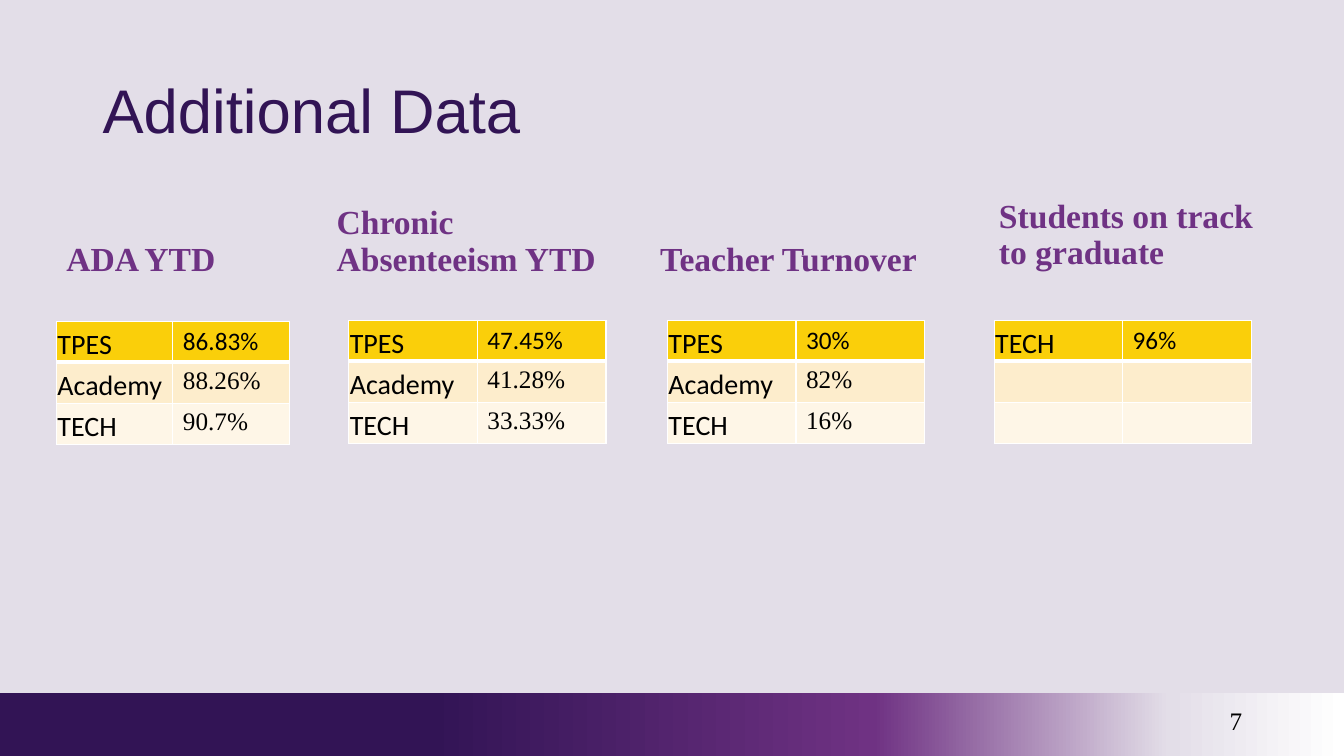
from dataclasses import dataclass

from lxml.etree import SubElement
from pptx import Presentation
from pptx.dml.color import RGBColor
from pptx.enum.shapes import MSO_SHAPE
from pptx.enum.text import MSO_ANCHOR, PP_ALIGN
from pptx.oxml.ns import qn
from pptx.util import Inches, Pt


@dataclass(frozen=True)
class Theme:
    background: str = "E3DEE8"
    title: str = "321455"
    heading: str = "6F3284"
    text: str = "000000"
    border: str = "FFFFFF"
    row_fills: tuple = ("FACF0A", "FDEDCC", "FEF6E7")
    footer_stops: tuple = ((32, "321455"), (65, "6F3283"), (87, "E3DEE8"), (100, "FFFFFF"))
    sans: str = "Arial"
    label_font: str = "Calibri"
    serif: str = "Times New Roman"
    title_size: int = 44
    heading_size: int = 24
    label_size: int = 20
    value_size: int = 18


THEME = Theme()
ROW_HEIGHTS = (0.4, 0.41, 0.41)

# Heading, heading box, table left / top / width, rows
PANELS = (
    ("ADA YTD", (0.56, 2.18, 2.3, 0.63), (0.56, 3.19, 2.31),
     (("TPES", "86.83%"), ("Academy", "88.26%"), ("TECH", "90.7%"))),
    ("Chronic Absenteeism YTD", (3.24, 1.91, 2.83, 0.9), (3.46, 3.18, 2.55),
     (("TPES", "47.45%"), ("Academy", "41.28%"), ("TECH", "33.33%"))),
    ("Teacher Turnover", (6.45, 1.91, 2.83, 0.9), (6.62, 3.18, 2.55),
     (("TPES", "30%"), ("Academy", "82%"), ("TECH", "16%"))),
    ("Students on track to graduate", (9.81, 1.85, 2.83, 0.9), (9.86, 3.18, 2.55),
     (("TECH", "96%"), ("", ""), ("", ""))),
)


def apply_format(target, values):
    for name, value in values.items():
        setattr(target, name, value)


def write_text(frame, text, size, font, color, bold=False, **para_format):
    para = frame.paragraphs[0]
    apply_format(para, para_format)
    span = para.add_run()
    span.text = text
    apply_format(span.font, {"size": Pt(size), "name": font, "bold": bold})
    span.font.color.rgb = RGBColor.from_string(color)


def add_text(page, box, text, size, font, color, anchor=MSO_ANCHOR.TOP, **options):
    frame = page.shapes.add_textbox(*map(Inches, box)).text_frame
    apply_format(frame, {"word_wrap": True, "vertical_anchor": anchor})
    write_text(frame, text, size, font, color, **options)


def set_borders(cell, widths):
    """Draw cell edges; widths gives points for left, right, top and bottom."""
    properties = cell._tc.get_or_add_tcPr()
    for index, (side, width) in enumerate(zip("LRTB", widths)):
        line = SubElement(properties, qn(f"a:ln{side}"), w=str(Pt(width)))
        properties.insert(index, line)
        solid = SubElement(line, qn("a:solidFill"))
        SubElement(solid, qn("a:srgbClr"), val=THEME.border)


def fill_cell(cell, text, row, is_label):
    cell.fill.solid()
    cell.fill.fore_color.rgb = RGBColor.from_string(THEME.row_fills[row])
    set_borders(cell, (1, 1, 3 if row == 1 else 1, 3 if row == 0 else 1))
    if not text:
        return
    if is_label:
        edge = Inches(0.01)
        apply_format(cell, {"vertical_anchor": MSO_ANCHOR.BOTTOM, "margin_left": edge,
                            "margin_right": edge, "margin_top": edge, "margin_bottom": 0})
    font = THEME.label_font if is_label or row == 0 else THEME.serif
    size = THEME.label_size if is_label else THEME.value_size
    write_text(cell.text_frame, text, size, font, THEME.text)


def add_panel(page, heading, heading_box, table_place, rows):
    add_text(page, heading_box, heading, THEME.heading_size, THEME.serif, THEME.heading,
             MSO_ANCHOR.BOTTOM, bold=True, line_spacing=0.9)
    left, top, width = table_place
    area = map(Inches, (left, top, width, sum(ROW_HEIGHTS)))
    table = page.shapes.add_table(len(rows), 2, *area).table
    apply_format(table, {"first_row": False, "horz_banding": False})
    for row, (values, height) in enumerate(zip(rows, ROW_HEIGHTS)):
        table.rows[row].height = Inches(height)
        for column, text in enumerate(values):
            fill_cell(table.cell(row, column), text, row, column == 0)


def add_footer(page, left, top, width, height):
    area = map(Inches, (left, top, width, height))
    band = page.shapes.add_shape(MSO_SHAPE.RECTANGLE, *area)
    band.shadow.inherit = False
    band.line.fill.background()
    band.fill.gradient()
    band.fill.gradient_angle = 0
    stops = band._element.spPr.find(qn("a:gradFill")).find(qn("a:gsLst"))
    for stop in list(stops):
        stops.remove(stop)
    for percent, color in THEME.footer_stops:
        stop = SubElement(stops, qn("a:gs"), pos=str(percent * 1000))
        SubElement(stop, qn("a:srgbClr"), val=color)
    add_text(page, (left + 9.42, top + 0.07, 3, 0.4), "7", THEME.value_size, THEME.serif,
             THEME.text, alignment=PP_ALIGN.RIGHT)


def build_page(deck):
    page = deck.slides.add_slide(deck.slide_layouts[6])
    page.background.fill.solid()
    page.background.fill.fore_color.rgb = RGBColor.from_string(THEME.background)
    add_footer(page, 0, 6.88, 13.33, 0.62)
    add_text(page, (0.92, 0.4, 11.5, 1.45), "Additional Data", THEME.title_size, THEME.sans,
             THEME.title, MSO_ANCHOR.MIDDLE, line_spacing=0.9)
    for panel in PANELS:
        add_panel(page, *panel)


def main():
    deck = Presentation()
    apply_format(deck, {"slide_width": Inches(13.33), "slide_height": Inches(7.5)})
    build_page(deck)
    deck.save("out.pptx")


if __name__ == "__main__":
    main()
